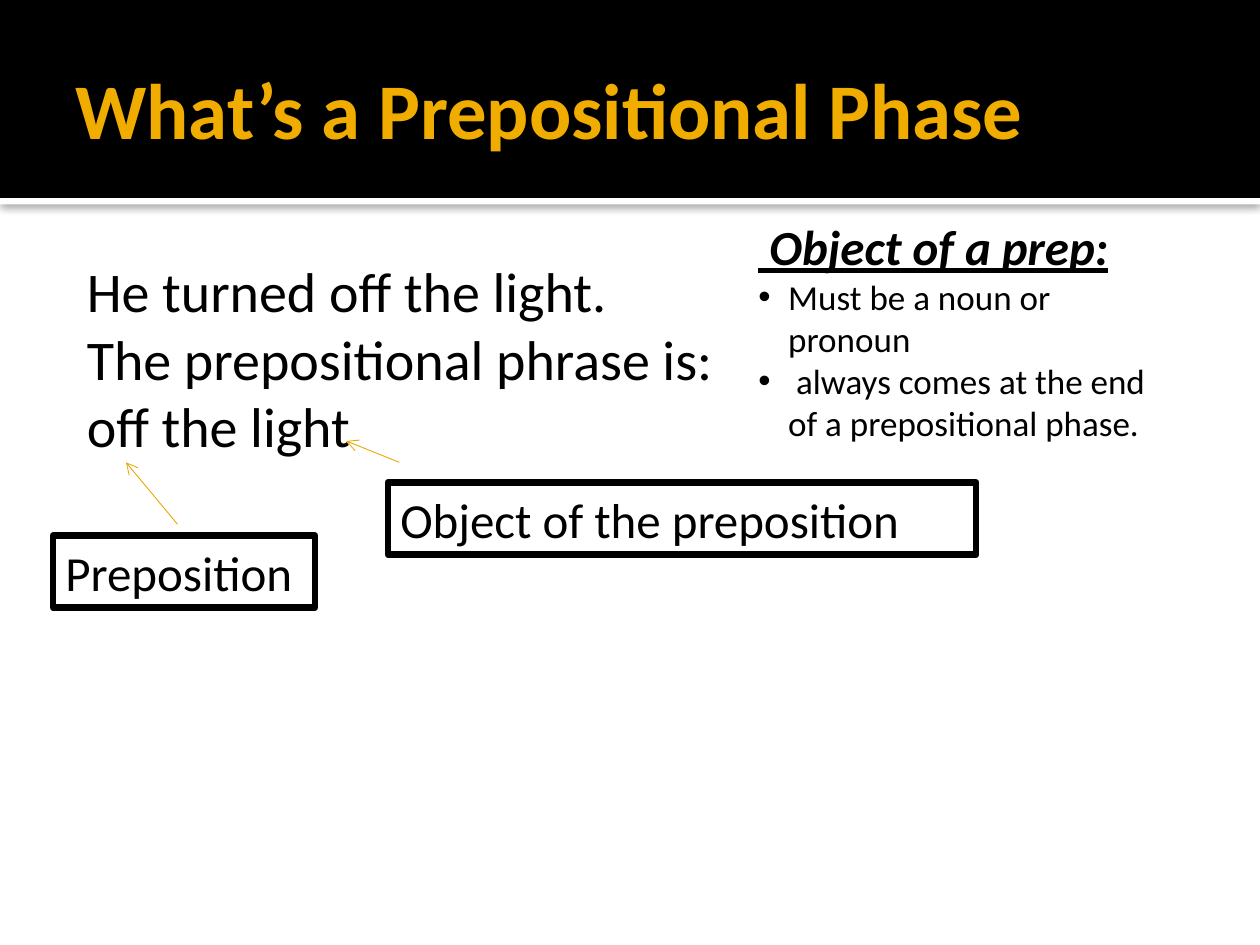
from lxml import etree
from pptx import Presentation
from pptx.dml.color import RGBColor
from pptx.enum.shapes import MSO_CONNECTOR, MSO_SHAPE
from pptx.enum.text import MSO_ANCHOR, MSO_AUTO_SIZE, PP_ALIGN
from pptx.oxml import parse_xml
from pptx.oxml.ns import nsdecls, qn
from pptx.util import Cm, Pt

RECT = MSO_SHAPE.RECTANGLE
LINE = MSO_CONNECTOR.STRAIGHT
LEFT = PP_ALIGN.LEFT
TOP, MIDDLE = MSO_ANCHOR.TOP, MSO_ANCHOR.MIDDLE
FIXED, GROW = MSO_AUTO_SIZE.NONE, MSO_AUTO_SIZE.SHAPE_TO_FIT_TEXT

BLACK = RGBColor(0x00, 0x00, 0x00)
WHITE = RGBColor(0xFF, 0xFF, 0xFF)
GOLD = RGBColor(0xF0, 0xAD, 0x00)
AMBER = RGBColor(0xEB, 0xA9, 0x00)

WIDTH, HEIGHT = 25.4, 19.05
SHADOW = (
    f'<a:effectLst {nsdecls("a")}>'
    f'<a:outerShdw blurRad="{Pt(5)}" dist="{Pt(0.8)}" dir="5400000" rotWithShape="0">'
    '<a:srgbClr val="000000"><a:alpha val="60000"/></a:srgbClr>'
    '</a:outerShdw></a:effectLst>'
)


def set_frame(shape, insets=(0.25, 0.13, 0.25, 0.13), anchor=TOP, fit=FIXED):
    frame = shape.text_frame
    frame.word_wrap = True
    frame.auto_size = fit
    frame.vertical_anchor = anchor
    (frame.margin_left, frame.margin_top,
     frame.margin_right, frame.margin_bottom) = map(Cm, insets)
    return frame


def write(par, text, size, color=BLACK, bold=False, slant=False, under=False,
          margin=0, hang=0, bullet=None):
    par.alignment = LEFT
    run = par.add_run()
    run.text = text
    font = run.font
    font.name, font.size = "Calibri", Pt(size)
    font.bold, font.italic, font.underline = bold, slant, under
    font.color.rgb = color
    props = par._p.get_or_add_pPr()
    props.set("marL", str(Cm(margin)))
    props.set("indent", str(-Cm(hang)))
    if bullet:
        etree.SubElement(props, qn("a:buFont"), typeface="Arial")
        etree.SubElement(props, qn("a:buChar"), char=bullet)


def add_bar(slide, left, top, width, height, color):
    bar = slide.shapes.add_shape(RECT, Cm(left), Cm(top), Cm(width), Cm(height))
    bar.shadow.inherit = False
    bar.fill.solid()
    bar.fill.fore_color.rgb = color
    bar.line.fill.background()
    return bar


def add_head(slide, left, top, width, height):
    strip = add_bar(slide, left, top + height, width, 0.13, WHITE)
    props = strip._element.spPr
    props.remove(props.find(qn("a:effectLst")))
    props.append(parse_xml(SHADOW))
    add_bar(slide, left, top, width, height, BLACK)
    title = slide.shapes.title
    slide.shapes._spTree.append(title._element)
    title.left, title.top = Cm(left + 1.27), Cm(top + 0.43)
    title.width, title.height = Cm(width - 2.54), Cm(height - 0.51)
    frame = set_frame(title, (0.25, 0.13, 0.13, 0.13), MIDDLE)
    write(frame.paragraphs[0], "What’s a Prepositional Phase", 45, GOLD, bold=True)


def add_text(slide, left, top, width, height, **layout):
    box = slide.shapes.add_textbox(Cm(left), Cm(top), Cm(width), Cm(height))
    return box, set_frame(box, **layout)


def add_body(slide, left, top, width, height):
    _, frame = add_text(slide, left, top, width, height,
                        insets=(0.15, 0.25, 0.25, 0.13))
    lines = ("He turned off the light.", "The prepositional phrase is:",
             "off the light")
    for row, text in enumerate(lines):
        par = frame.add_paragraph() if row else frame.paragraphs[0]
        write(par, text, 32, margin=1.22, hang=0.89)


def add_label(slide, left, top, width, text, start, end):
    box, frame = add_text(slide, left, top, width, 1.45, fit=GROW)
    box.fill.solid()
    box.fill.fore_color.rgb = WHITE
    box.line.color.rgb = BLACK
    box.line.width = Pt(3.78)
    write(frame.paragraphs[0], text, 28)
    ends = [Cm(base + step) for point in (start, end)
            for base, step in zip((left, top), point)]
    arrow = slide.shapes.add_connector(LINE, *ends)
    arrow.line.color.rgb = AMBER
    arrow.line.width = Pt(0.5)
    etree.SubElement(arrow.line._get_or_add_ln(), qn("a:tailEnd"), type="arrow")
    etree.SubElement(arrow._element.spPr, qn("a:effectLst"))


def add_rules(slide, left, top, width, height):
    _, frame = add_text(slide, left, top, width, height, fit=GROW)
    write(frame.paragraphs[0], " Object of a prep:", 28,
          bold=True, slant=True, under=True)
    for text in ("Must be a noun or pronoun",
                 " always comes at the end of a prepositional phase."):
        write(frame.add_paragraph(), text, 20, margin=0.6, hang=0.6, bullet="•")


def main():
    deck = Presentation()
    deck.slide_width, deck.slide_height = Cm(WIDTH), Cm(HEIGHT)
    slide = deck.slides.add_slide(deck.slide_layouts[5])
    add_head(slide, 0, 0, WIDTH, 3.99)
    add_body(slide, 1.27, 4.93, 22.86, 12.85)
    add_label(slide, 7.82, 9.73, 11.86, "Object of the preposition",
              (0.23, -0.41), (-0.84, -0.84))
    add_label(slide, 1.07, 10.8, 5.28, "Preposition",
              (2.51, -0.23), (1.47, -1.48))
    add_rules(slide, 15.04, 4.24, 8.76, 4.01)
    deck.save("out.pptx")


if __name__ == "__main__":
    main()
